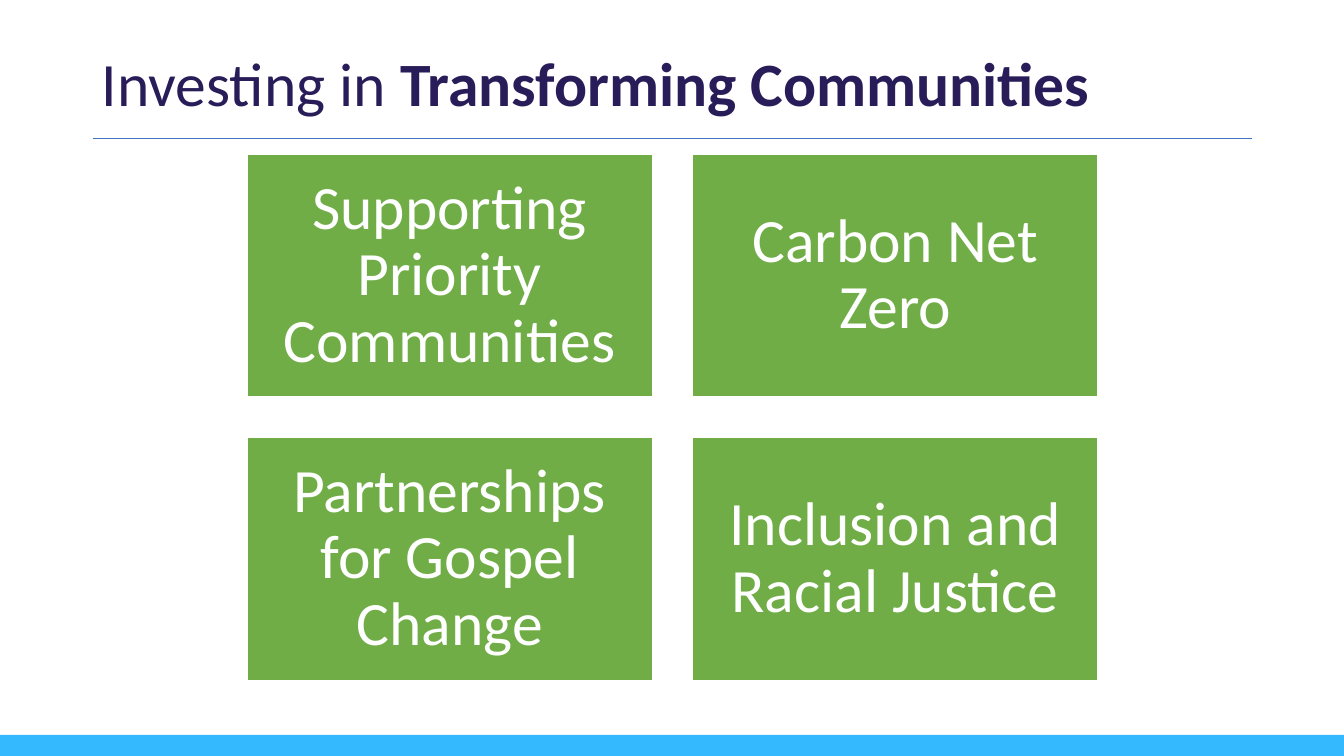
from lxml.etree import SubElement
from pptx import Presentation
from pptx.dml.color import RGBColor
from pptx.enum.shapes import MSO_CONNECTOR, MSO_SHAPE
from pptx.enum.text import MSO_ANCHOR, PP_ALIGN
from pptx.oxml.ns import qn
from pptx.util import Inches, Pt

FONT = "Calibri"
THEMES = [
    "Supporting Priority Communities",
    "Carbon Net Zero",
    "Partnerships for Gospel Change",
    "Inclusion and Racial Justice",
]
COLUMNS = 2
CARD_LEFT, CARD_TOP = 2.45, 1.53
CARD_WIDTH, CARD_HEIGHT = 4.02, 2.41
CARD_GAP = 0.4


def color(value):
    return RGBColor.from_string(value)


def style_font(font, value):
    font.name = FONT
    font.size = Pt(44)
    font.color.rgb = color(value)


def add_rectangle(slide, left, top, width, height, fill):
    shape = slide.shapes.add_shape(
        MSO_SHAPE.RECTANGLE, Inches(left), Inches(top), Inches(width), Inches(height)
    )
    shape.shadow.inherit = False
    shape.fill.solid()
    shape.fill.fore_color.rgb = color(fill)
    shape.line.fill.background()
    return shape


def add_rule(slide, left, right, top):
    rule = slide.shapes.add_connector(
        MSO_CONNECTOR.STRAIGHT, Inches(left), Inches(top), Inches(right), Inches(top)
    )
    rule.line.color.rgb = color("4472C4")
    rule.line.width = Pt(0.5)
    SubElement(rule.element.spPr, qn("a:effectLst"))


def add_title(slide, lead, emphasis):
    box = slide.shapes.add_textbox(Inches(0.91), Inches(0.4), Inches(11.51), Inches(0.84))
    box.text_frame.word_wrap = True
    paragraph = box.text_frame.paragraphs[0]
    style_font(paragraph.font, "281D58")
    for text, bold in ((lead, False), (emphasis, True)):
        run = paragraph.add_run()
        run.text = text
        run.font.bold = bold


def add_card(slide, left, top, text):
    card = add_rectangle(slide, left, top, CARD_WIDTH, CARD_HEIGHT, "70AD47")
    card.line.color.rgb = color("FFFFFF")
    card.line.width = Pt(1)
    frame = card.text_frame
    frame.word_wrap = True
    frame.vertical_anchor = MSO_ANCHOR.MIDDLE
    frame.margin_left = frame.margin_right = Inches(0.18)
    frame.margin_top = frame.margin_bottom = Inches(0.18)
    paragraph = frame.paragraphs[0]
    paragraph.text = text
    paragraph.alignment = PP_ALIGN.CENTER
    paragraph.line_spacing = 0.9
    style_font(paragraph.font, "FFFFFF")


def main():
    presentation = Presentation()
    presentation.slide_width = Inches(13.33)
    presentation.slide_height = Inches(7.5)
    slide = presentation.slides.add_slide(presentation.slide_layouts[6])

    add_rectangle(slide, 0, 7.29, 13.33, 0.21, "34B8FE")
    add_rule(slide, 0.92, 12.42, 1.37)
    add_title(slide, "Investing in ", "Transforming Communities")
    for index, theme in enumerate(THEMES):
        row, column = divmod(index, COLUMNS)
        left = CARD_LEFT + column * (CARD_WIDTH + CARD_GAP)
        top = CARD_TOP + row * (CARD_HEIGHT + CARD_GAP)
        add_card(slide, left, top, theme)

    presentation.save("out.pptx")


if __name__ == "__main__":
    main()
